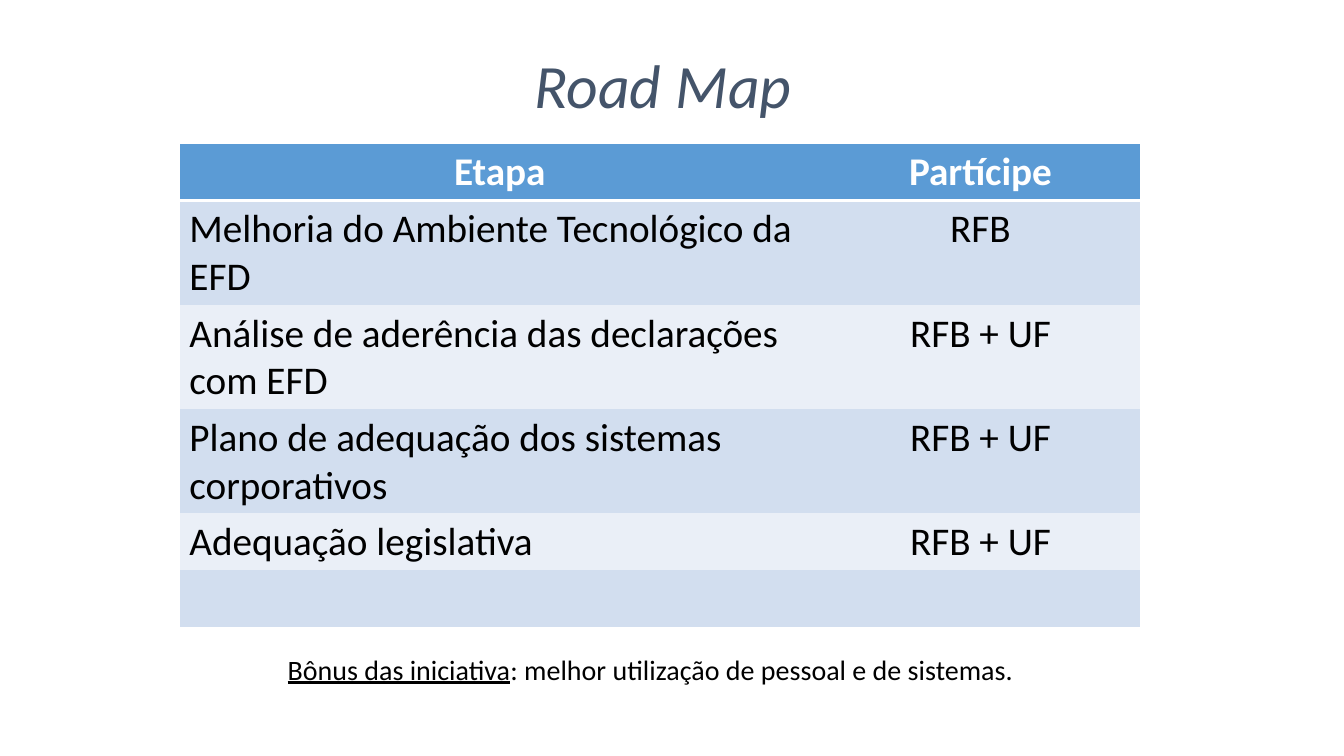
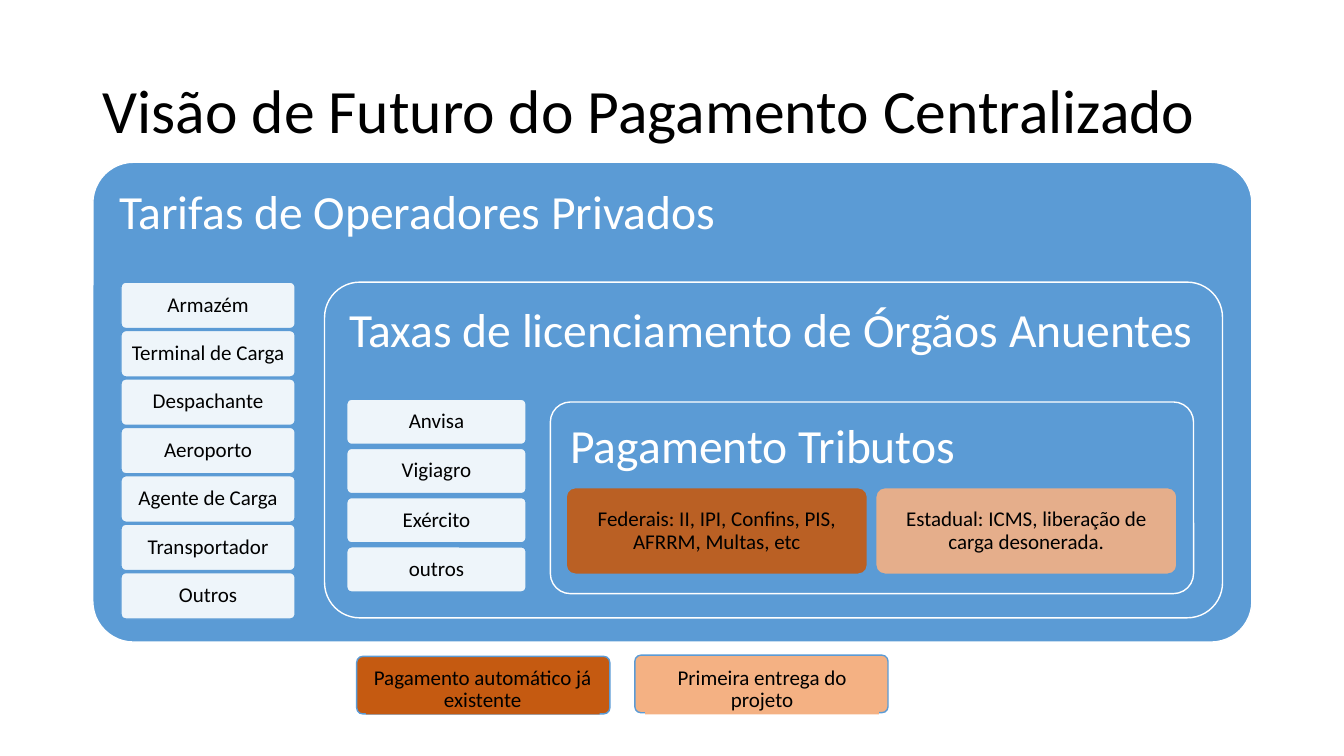
from dataclasses import dataclass
from typing import Any, NamedTuple, Optional

import lxml.etree
import pptx
import pptx.dml.color
import pptx.enum.shapes
import pptx.enum.text
import pptx.oxml.ns
import pptx.util

Cm = pptx.util.Cm
Pt = pptx.util.Pt
ALIGN = pptx.enum.text.PP_ALIGN
ANCHOR = pptx.enum.text.MSO_ANCHOR
PRESET = pptx.enum.shapes.MSO_SHAPE
qn = pptx.oxml.ns.qn

# Shared look
FONT = "Calibri"
BLUE, WHITE, BLACK, SLATE = "5B9BD5", "FFFFFF", "000000", "44546A"
BAND_DARK, BAND_LIGHT = "D2DEEF", "EAEFF7"
RUST, PEACH = "C55A11", "F4B183"
NO_GRID_STYLE = "{2D5ABB26-0587-4C30-8999-92F81FD0307C}"
ROUNDING = 0.105


class Box(NamedTuple):
    """Left, top, width and height in centimetres."""
    left: float
    top: float
    width: float
    height: float

    def lengths(self) -> list[pptx.util.Length]:
        return [Cm(side) for side in self]


@dataclass
class Style:
    size: float
    color: str = BLACK
    bold: bool = False
    italic: bool = False
    underline: bool = False


@dataclass
class Look:
    fill: str
    line: Optional[str] = BLUE
    opacity: int = 100
    rounding: Optional[float] = ROUNDING


@dataclass
class Grid:
    """Equal tiles set out from the first one by a fixed step."""
    first: Box
    step_x: float
    step_y: float
    labels: list[str]
    fills: list[str]


@dataclass
class Panel:
    heading: str
    box: Box
    rounding: float
    tiles: Grid


@dataclass
class Legend:
    label: str
    fill: str
    frame: Box
    plate: Box


TITLE = Style(44)
HEADING = Style(34, WHITE)
TILE = Style(15)

STAGES = [
    ("Etapa", "Partícipe"),
    ("Melhoria do Ambiente Tecnológico da EFD", "RFB"),
    ("Análise de aderência das declarações com EFD", "RFB + UF"),
    ("Plano de adequação dos sistemas corporativos", "RFB + UF"),
    ("Adequação legislativa", "RFB + UF"),
    ("", ""),
]
STAGE_COLUMNS = [16.15, 8.08]
STAGE_ROWS = [1.27, 2.34, 2.34, 2.34, 1.27, 1.27]

PANELS = [
    Panel("Tarifas de Operadores Privados", Box(2.34, 4.09, 29.21, 12.09), 0.085,
          Grid(Box(3.05, 7.11, 4.39, 1.17), 0, 1.22,
               ["Armazém", "Terminal de Carga", "Despachante", "Aeroporto",
                "Agente de Carga", "Transportador", "Outros"], [WHITE] * 7)),
    Panel("Taxas de licenciamento de Órgãos Anuentes",
          Box(8.18, 7.11, 22.63, 8.46), ROUNDING,
          Grid(Box(8.74, 10.06, 4.52, 1.14), 0, 1.24,
               ["Anvisa", "Vigiagro", "Exército", "outros"], [WHITE] * 4)),
    Panel("Pagamento Tributos", Box(13.87, 10.13, 16.21, 4.83), ROUNDING,
          Grid(Box(14.27, 12.29, 7.59, 2.18), 7.8, 0,
               ["Federais: II, IPI, Confins, PIS, AFRRM, Multas, etc",
                "Estadual: ICMS, liberação de carga desonerada."],
               [RUST, PEACH])),
]

LEGENDS = [
    Legend("Pagamento automático já existente", RUST,
           Box(8.99, 16.54, 6.38, 1.45), Box(9.22, 16.76, 5.89, 1.24)),
    Legend("Primeira entrega do projeto", PEACH,
           Box(16, 16.51, 6.38, 1.45), Box(16.26, 16.76, 5.89, 1.24)),
]


def colour(value: str) -> pptx.dml.color.RGBColor:
    return pptx.dml.color.RGBColor.from_string(value)


def add_run(paragraph: Any, text: str, style: Style) -> None:
    run = paragraph.add_run()
    run.text = text
    font = run.font
    font.name, font.size = FONT, Pt(style.size)
    font.bold, font.italic, font.underline = style.bold, style.italic, style.underline
    font.color.rgb = colour(style.color)


def write(frame: Any, text: str, style: Style, align: Any, anchor: Any,
          inset: float) -> None:
    """One paragraph of tight text, with equal insets on all sides."""
    frame.word_wrap = True
    frame.vertical_anchor = anchor
    frame.margin_left = frame.margin_right = Cm(inset)
    frame.margin_top = frame.margin_bottom = Cm(inset)
    paragraph = frame.paragraphs[0]
    paragraph.alignment = align
    paragraph.line_spacing = 0.9
    add_run(paragraph, text, style)


def add_titled_slide(deck: Any, text: str, box: Box, style: Style, align: Any) -> Any:
    slide = deck.slides.add_slide(deck.slide_layouts[5])
    title = slide.shapes.title
    title.left, title.top, title.width, title.height = box.lengths()
    title.text_frame.auto_size = pptx.enum.text.MSO_AUTO_SIZE.NONE
    write(title.text_frame, text, style, align, ANCHOR.MIDDLE, 0.25)
    return slide


def add_block(slide: Any, box: Box, look: Look) -> Any:
    preset = PRESET.RECTANGLE if look.rounding is None else PRESET.ROUNDED_RECTANGLE
    block = slide.shapes.add_shape(preset, *box.lengths())
    block.shadow.inherit = False
    if look.rounding is not None:
        block.adjustments[0] = look.rounding
    block.fill.solid()
    block.fill.fore_color.rgb = colour(look.fill)
    if look.opacity < 100:
        tint = block.element.spPr.find(qn("a:solidFill")).find(qn("a:srgbClr"))
        lxml.etree.SubElement(tint, qn("a:alpha"), val=str(look.opacity * 1000))
    if look.line is None:
        block.line.fill.background()
    else:
        block.line.color.rgb = colour(look.line)
        block.line.width = Pt(1)
    return block


def add_tile(slide: Any, box: Box, label: str, look: Look) -> None:
    tile = add_block(slide, box, look)
    write(tile.text_frame, label, TILE, ALIGN.CENTER, ANCHOR.MIDDLE, 0.15)


def add_panel(slide: Any, panel: Panel) -> None:
    back = add_block(slide, panel.box, Look(BLUE, WHITE, rounding=panel.rounding))
    write(back.text_frame, panel.heading, HEADING, ALIGN.LEFT, ANCHOR.TOP, 0.36)
    tiles = panel.tiles
    for index, (label, fill) in enumerate(zip(tiles.labels, tiles.fills)):
        place = tiles.first._replace(left=tiles.first.left + index * tiles.step_x,
                                     top=tiles.first.top + index * tiles.step_y)
        add_tile(slide, place, label, Look(fill, opacity=90))


def add_border(cell: Any, side: str, width: float) -> None:
    edge = lxml.etree.SubElement(cell._tc.get_or_add_tcPr(), qn(f"a:ln{side}"),
                                 w=str(Pt(width)))
    paint = lxml.etree.SubElement(edge, qn("a:solidFill"))
    lxml.etree.SubElement(paint, qn("a:srgbClr"), val=WHITE)


def fill_cell(cell: Any, text: str, row: int, column: int) -> None:
    header, last = row == 0, row == len(STAGES) - 1
    # Borders come before the fill in the cell properties
    add_border(cell, "R" if column else "L", 1)
    if header:
        add_border(cell, "T", 1)
        add_border(cell, "B", 3)
    elif last:
        add_border(cell, "B", 1)
    cell.fill.solid()
    band = BAND_DARK if row % 2 else BAND_LIGHT
    cell.fill.fore_color.rgb = colour(BLUE if header else band)

    paragraph = cell.text_frame.paragraphs[0]
    paragraph.alignment = ALIGN.CENTER if header or column else ALIGN.LEFT
    if text:
        add_run(paragraph, text, Style(28, WHITE if header else BLACK, bold=header))
    else:
        # An empty cell keeps the row as tall as the text size
        lxml.etree.SubElement(paragraph._p, qn("a:endParaRPr"), sz="2800")


def add_stage_table(slide: Any) -> None:
    place = Box(4.52, 3.61, sum(STAGE_COLUMNS), sum(STAGE_ROWS))
    stages = slide.shapes.add_table(len(STAGES), len(STAGE_COLUMNS),
                                    *place.lengths()).table
    stages._tbl.tblPr.find(qn("a:tableStyleId")).text = NO_GRID_STYLE
    for column, width in zip(stages.columns, STAGE_COLUMNS):
        column.width = Cm(width)
    for row, height in zip(stages.rows, STAGE_ROWS):
        row.height = Cm(height)
    for r, texts in enumerate(STAGES):
        for c, text in enumerate(texts):
            fill_cell(stages.cell(r, c), text, r, c)


def build_road_map(deck: Any) -> None:
    slide = add_titled_slide(deck, "Road Map ", Box(5.94, 0.84, 21.89, 2.77),
                             Style(44, SLATE, italic=True), ALIGN.CENTER)
    # Closing note
    note = slide.shapes.add_textbox(*Box(7.06, 16.33, 19.68, 1.63).lengths()).text_frame
    note.word_wrap = True
    note.margin_left = note.margin_right = Cm(0.19)
    note.margin_top = note.margin_bottom = Cm(0.1)
    add_run(note.paragraphs[0], "Bônus das iniciativa", Style(20, underline=True))
    add_run(note.paragraphs[0], ": melhor utilização de pessoal e de sistemas.", Style(20))
    add_stage_table(slide)


def build_payment_vision(deck: Any) -> None:
    slide = add_titled_slide(deck, "Visão de Futuro do Pagamento Centralizado",
                             Box(2.34, 1.02, 29.21, 3.68), TITLE, ALIGN.LEFT)
    # Nested panels, outermost first
    for panel in PANELS:
        add_panel(slide, panel)
    # Colour key
    for legend in LEGENDS:
        add_block(slide, legend.frame, Look(legend.fill))
        add_tile(slide, legend.plate, legend.label,
                 Look(legend.fill, line=None, rounding=None))


def main() -> None:
    deck = pptx.Presentation()
    deck.slide_width, deck.slide_height = Cm(33.87), Cm(19.05)
    build_road_map(deck)
    build_payment_vision(deck)
    deck.save("out.pptx")


if __name__ == "__main__":
    main()
